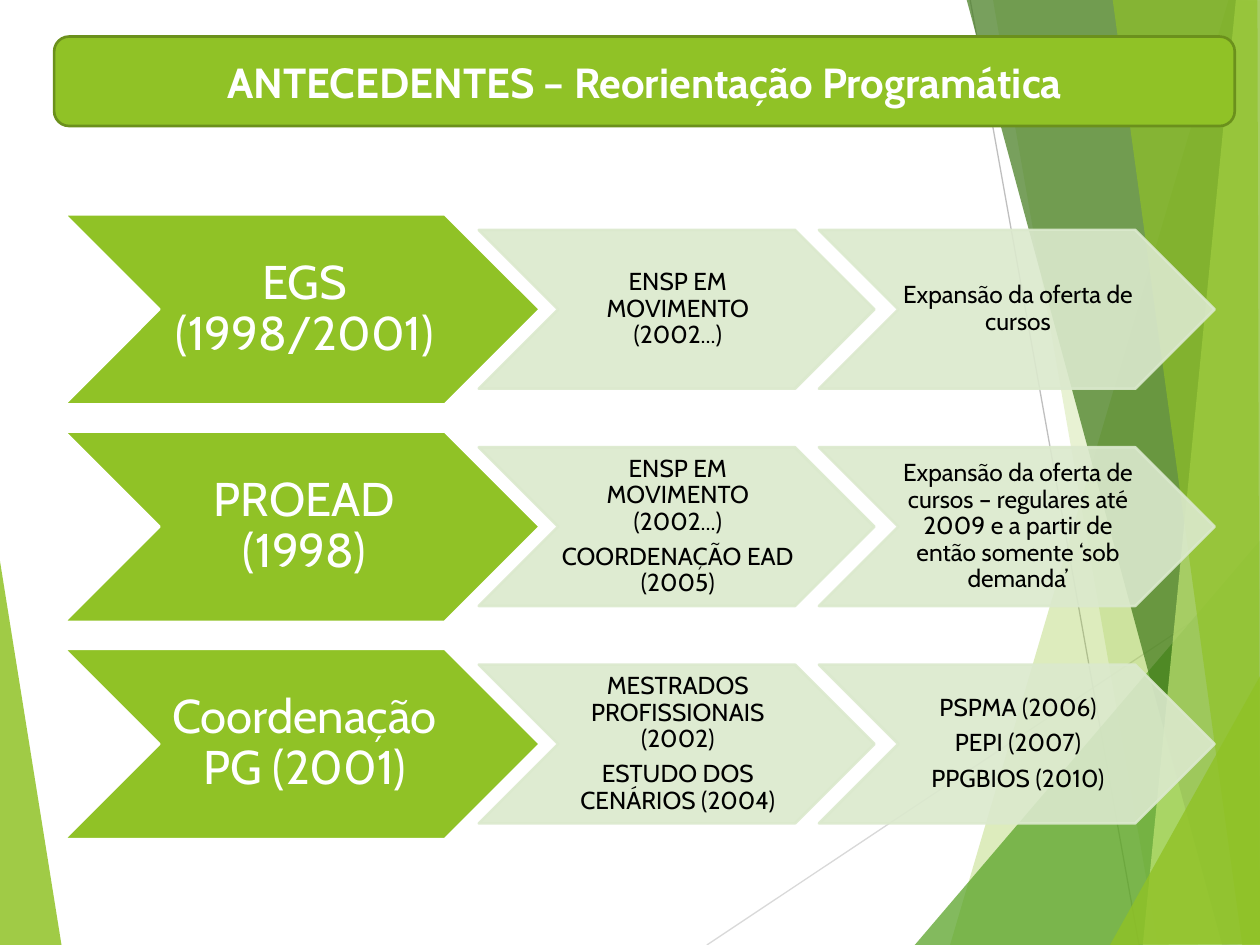
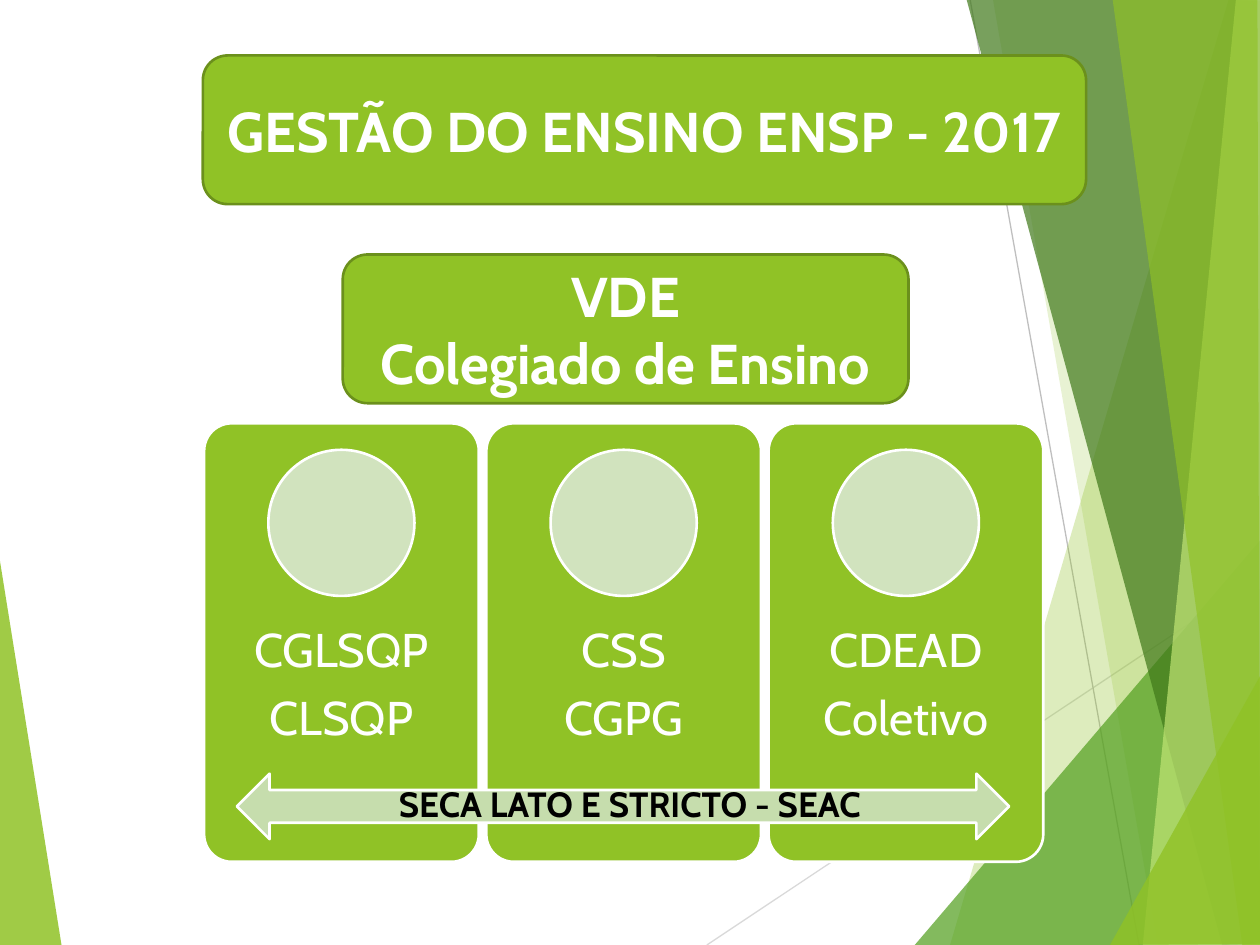
from dataclasses import dataclass

from lxml import etree
from pptx import Presentation
from pptx.dml.color import RGBColor
from pptx.enum.shapes import MSO_CONNECTOR, MSO_SHAPE
from pptx.enum.text import MSO_ANCHOR, PP_ALIGN
from pptx.oxml.ns import qn
from pptx.util import Inches, Pt

CENTER = PP_ALIGN.CENTER
MIDDLE = MSO_ANCHOR.MIDDLE
TOP = MSO_ANCHOR.TOP
STRAIGHT = MSO_CONNECTOR.STRAIGHT
CHEVRON = MSO_SHAPE.CHEVRON
ROUNDED = MSO_SHAPE.ROUNDED_RECTANGLE
OVAL = MSO_SHAPE.OVAL
DOUBLE_ARROW = MSO_SHAPE.LEFT_RIGHT_ARROW


@dataclass(frozen=True)
class Theme:
    font: str = "Cabin"
    green: str = "90C226"
    dark_green: str = "6B901C"
    leaf: str = "54A021"
    forest: str = "3F7819"
    lime: str = "C0E474"
    step: str = "DBE9CD"
    circle: str = "D1E3BE"
    arrow: str = "C6DDAD"
    light_gray: str = "D9D9D9"
    gray: str = "BFBFBF"
    white: str = "FFFFFF"
    black: str = "000000"
    title_size: int = 32
    long_title_size: int = 24
    lead_size: int = 27
    arrow_size: int = 20
    step_size: int = 14
    outline: float = 1.5
    hairline: float = 0.75


THEME = Theme()
PANEL_MARGINS = (0.1, 0.05, 0.1, 0.05)

FACETS = [
    ([(-0.01, 4.39), (0.49, 7.51), (-0.01, 7.5)], THEME.green, 85),
    ([(9.75, 0), (7.54, 7.5), (10.02, 7.51), (10.01, 0.01)], THEME.green, 30),
    ([(7.88, -0.01), (9.19, 7.5), (10.01, 7.5), (10.01, -0.01)], THEME.green, 20),
    ([(7.26, 7.5), (10, 4.29), (10.01, 7.5)], THEME.leaf, 72),
    ([(7.67, -0.01), (9.7, 7.5), (10.01, 7.49), (10.01, -0.01)], THEME.forest, 70),
    ([(9.81, -0.01), (9.07, 7.5), (10.01, 7.5), (10, -0.01)], THEME.lime, 70),
    ([(8.83, -0.01), (9.86, 7.5), (10, 7.5), (9.98, -0.01)], THEME.green, 65),
    ([(8.81, 7.5), (10.01, 5.35), (10.01, 7.49)], THEME.green, 80),
]
RAYS = [
    ((5.61, 7.5), (10.01, 4.57), THEME.light_gray),
    ((7.7, 0), (9.04, 7.5), THEME.gray),
]

PROGRAMMES = [
    ("EGS (1998/2001)",
     ["ENSP EM MOVIMENTO (2002...)"],
     ["Expansão da oferta de cursos"]),
    ("PROEAD (1998)",
     ["ENSP EM MOVIMENTO (2002...)", "COORDENAÇÃO EAD (2005)"],
     ["Expansão da oferta de cursos – regulares até 2009 "
      "e a partir de então somente ‘sob demanda’"]),
    ("Coordenação PG (2001)",
     ["MESTRADOS PROFISSIONAIS (2002)", "ESTUDO DOS CENÁRIOS (2004)"],
     ["PSPMA (2006)", "PEPI (2007)", "PPGBIOS (2010)"]),
]
COORDINATIONS = [["CGLSQP", "CLSQP"], ["CSS", "CGPG"], ["CDEAD", "Coletivo"]]


def rgb(color):
    return RGBColor.from_string(color)


def set_opacity(shape, percent):
    for color in shape.element.spPr.iter(qn("a:srgbClr")):
        etree.SubElement(color, qn("a:alpha")).set("val", str(percent * 1000))


def add_panel(page, kind, box, fill, line):
    shape = page.shapes.add_shape(kind, *map(Inches, box))
    shape.shadow.inherit = False
    shape.fill.solid()
    shape.fill.fore_color.rgb = rgb(fill)
    shape.line.color.rgb = rgb(line)
    shape.line.width = Pt(THEME.outline)
    return shape


def write(shape, lines, size, color, bold=False, margins=PANEL_MARGINS,
          anchor=MIDDLE, tight=False):
    frame = shape.text_frame
    frame.text = "\n".join(lines)
    frame.word_wrap = True
    frame.vertical_anchor = anchor
    (frame.margin_left, frame.margin_top,
     frame.margin_right, frame.margin_bottom) = map(Inches, margins)
    for para in frame.paragraphs:
        para.alignment = CENTER
        if tight:
            para.line_spacing = 0.9
            para.space_after = Pt(size * 0.35)
        for span in para.runs:
            span.font.name = THEME.font
            span.font.size = Pt(size)
            span.font.bold = bold
            span.font.color.rgb = rgb(color)


def add_facet(page, points, color, opacity):
    corners = [(Inches(x), Inches(y)) for x, y in points]
    builder = page.shapes.build_freeform(*corners[0])
    builder.add_line_segments(corners[1:])
    facet = builder.convert_to_shape()
    facet.shadow.inherit = False
    facet.fill.solid()
    facet.fill.fore_color.rgb = rgb(color)
    facet.line.fill.background()
    set_opacity(facet, opacity)


def add_ray(page, start, end, color):
    ray = page.shapes.add_connector(STRAIGHT, *map(Inches, start + end))
    ray.line.color.rgb = rgb(color)
    ray.line.width = Pt(THEME.hairline)
    etree.SubElement(ray.element.spPr, qn("a:effectLst"))


def add_page(deck):
    page = deck.slides.add_slide(deck.slide_layouts[6])
    add_facet(page, *FACETS[0])
    for ray in RAYS:
        add_ray(page, *ray)
    for facet in FACETS[1:]:
        add_facet(page, *facet)
    return page


def add_banner(page, box, lines, size):
    banner = add_panel(page, ROUNDED, box, THEME.green, THEME.dark_green)
    write(banner, lines, size, THEME.white, bold=True)


def add_programme_row(page, box, programme, steps):
    left, top, width, height = box
    lead_width, step_width, step_height = height * 2.5, 3.14, 1.26
    lead = add_panel(page, CHEVRON, (left, top, lead_width, height),
                     THEME.green, THEME.white)
    write(lead, [programme], THEME.lead_size, THEME.white,
          margins=(0.04, 0.02, 0, 0.02), tight=True)
    step_pitch = 2.7
    first_left = left + width - step_width - step_pitch * (len(steps) - 1)
    step_top = top + (height - step_height) / 2
    for index, lines in enumerate(steps):
        step_box = (first_left + index * step_pitch, step_top, step_width, step_height)
        step = add_panel(page, CHEVRON, step_box, THEME.step, THEME.step)
        set_opacity(step, 90)
        write(step, lines, THEME.step_size, THEME.black,
              margins=(0.02, 0.01, 0, 0.01), tight=True)


def add_coordination_card(page, box, lines):
    left, top, width, height = box
    card = add_panel(page, ROUNDED, box, THEME.green, THEME.white)
    card.adjustments[0] = 0.1
    write(card, lines, THEME.lead_size, THEME.white,
          margins=(0.15, 1.33, 0.15, 0.64), tight=True)
    diameter = 1.16
    add_panel(page, OVAL, (left + (width - diameter) / 2, top + 0.21, diameter, diameter),
              THEME.circle, THEME.white)


def add_support_arrow(page, box, caption):
    left, top, width, height = box
    add_panel(page, DOUBLE_ARROW, box, THEME.arrow, THEME.white)
    label_box = (left + 1.15, top + 0.02, 3.94, 0.44)
    label = page.shapes.add_textbox(*map(Inches, label_box))
    write(label, [caption], THEME.arrow_size, THEME.black, bold=True, anchor=TOP)


def build_background_page(deck):
    page = add_page(deck)
    left, top, width, height, pitch = 0.51, 1.7, 9.13, 1.51, 1.725
    for index, (programme, *steps) in enumerate(PROGRAMMES):
        add_programme_row(page, (left, top + index * pitch, width, height),
                          programme, steps)
    add_banner(page, (0.43, 0.29, 9.37, 0.71),
               ["ANTECEDENTES – Reorientação Programática"], THEME.long_title_size)


def build_management_page(deck):
    page = add_page(deck)
    left, top, width, height, pitch = 1.62, 3.36, 2.18, 3.48, 2.24
    for index, lines in enumerate(COORDINATIONS):
        add_coordination_card(page, (left + index * pitch, top, width, height), lines)
    add_support_arrow(page, (1.88, 6.14, 6.13, 0.52), "SECA LATO E STRICTO - SEAC")
    add_banner(page, (1.61, 0.44, 7.01, 1.18),
               ["GESTÃO DO ENSINO ENSP - 2017"], THEME.title_size)
    add_banner(page, (2.72, 2.02, 4.49, 1.18),
               ["VDE", "Colegiado de Ensino"], THEME.title_size)


def main():
    deck = Presentation()
    deck.slide_width, deck.slide_height = Inches(10), Inches(7.5)
    build_background_page(deck)
    build_management_page(deck)
    deck.save("out.pptx")


if __name__ == "__main__":
    main()
